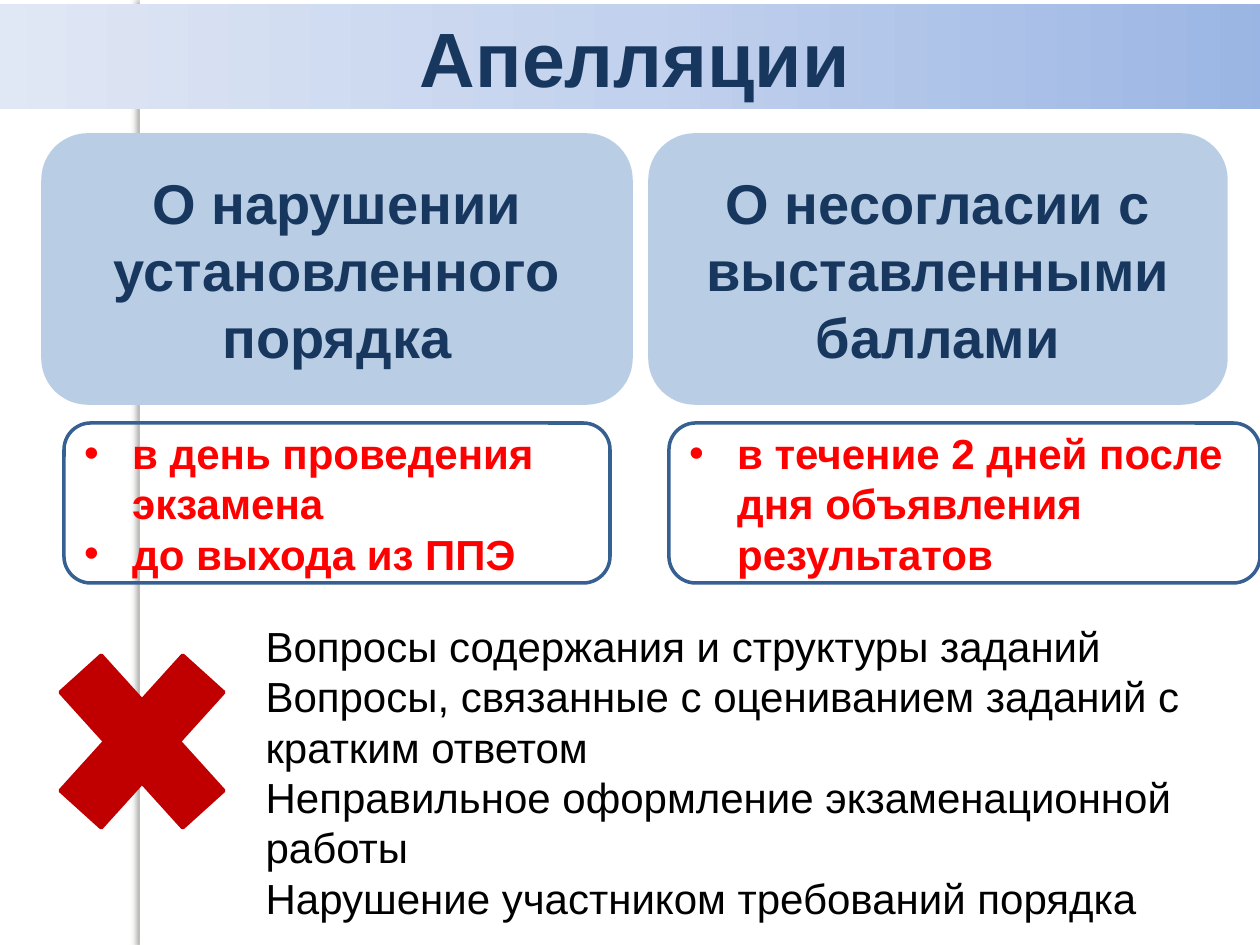
from copy import deepcopy
from lxml import etree
from pptx import Presentation
from pptx.dml.color import RGBColor
from pptx.enum.shapes import MSO_SHAPE
from pptx.enum.text import MSO_ANCHOR, MSO_AUTO_SIZE, PP_ALIGN
from pptx.oxml.ns import qn
from pptx.util import Emu, Pt

RECT, ROUND = MSO_SHAPE.RECTANGLE, MSO_SHAPE.ROUNDED_RECTANGLE
CROSS = MSO_SHAPE.MATH_MULTIPLY
TOP, MIDDLE = MSO_ANCHOR.TOP, MSO_ANCHOR.MIDDLE
LEFT, CENTER = PP_ALIGN.LEFT, PP_ALIGN.CENTER
FIXED = MSO_AUTO_SIZE.NONE
SCALE = 914400 / 126
COLORS = {
    "white": "FFFFFF", "black": "000000", "navy": "17375E", "pale": "B9CDE5",
    "edge": "376092", "red": "FF0000", "cross": "C00000", "shade": "77756F",
    "deep": "9AB5E4", "mid": "C2D1ED", "light": "E1E8F5",
}
HEAD = {"size": Pt(44), "bold": True}
CARD = {"size": Pt(32), "bold": True}
TERM = {"size": Pt(24), "bold": True}
LIST = {"size": Pt(24), "bold": False}
COLUMNS = [
    ((43, 135, 588, 268), "О нарушении установленного порядка",
     (64, 423, 546, 160), ["в день проведения экзамена", "до выхода из ППЭ"]),
    ((650, 135, 576, 268), "О несогласии с выставленными баллами",
     (669, 423, 591, 160), ["в течение 2 дней после дня объявления результатов"]),
]
LIMITS = [
    "Вопросы содержания и структуры заданий",
    "Вопросы, связанные с оцениванием заданий с кратким ответом",
    "Неправильное оформление экзаменационной работы",
    "Нарушение участником требований порядка",
]


def px(num):
    return Emu(round(num * SCALE))


def rgb(name):
    return RGBColor.from_string(COLORS[name])


def place(shape, box):
    for key, num in zip(("left", "top", "width", "height"), box):
        setattr(shape, key, px(num))


def draw(slide, kind, box, fill=None, line=None):
    shape = slide.shapes.add_shape(kind, *map(px, box))
    shape.shadow.inherit = False
    if fill:
        shape.fill.solid()
        shape.fill.fore_color.rgb = rgb(fill)
    else:
        shape.fill.background()
    if line:
        shape.line.color.rgb = rgb(line)
        shape.line.width = Pt(2)
    else:
        shape.line.fill.background()
    return shape


def write(shape, lines, style, color, align=LEFT, anchor=MIDDLE, mark=None):
    frame = shape.text_frame
    frame.word_wrap = True
    frame.auto_size = FIXED
    frame.vertical_anchor = anchor
    frame.text = "\n".join(lines)
    for para in frame.paragraphs:
        props = para._p.get_or_add_pPr()
        dent = px(48) if mark else 0
        props.set("marL", str(dent))
        props.set("indent", str(-dent))
        para.alignment = align
        para.space_before = Pt(0)
        if mark:
            etree.SubElement(props, qn("a:buFont"), typeface="Arial")
            etree.SubElement(props, qn("a:buChar"), char=mark)
        else:
            etree.SubElement(props, qn("a:buNone"))
        for run in para.runs:
            run.font.name = "Arial"
            run.font.color.rgb = rgb(color)
            for key, value in style.items():
                setattr(run.font, key, value)


def shade(shape, color, alpha, blur, dist, turn):
    effects = shape._element.spPr.find(qn("a:effectLst"))
    outer = etree.SubElement(
        effects, qn("a:outerShdw"), blurRad=str(Pt(blur)), dist=str(Pt(dist)),
        dir=str(turn * 60000), algn="tl", rotWithShape="0")
    tint = etree.SubElement(outer, qn("a:srgbClr"), val=COLORS[color])
    etree.SubElement(tint, qn("a:alpha"), val=str(alpha * 1000))


def page(slide, box):
    left, top, width, height = box
    sheet = draw(slide, RECT, box, "white")
    shade(sheet, "black", 38, 3.1, 1.6, 90)
    strip = draw(slide, RECT, (left, top, 10, height), "white")
    shade(strip, "shade", 25, 3, 3, 180)


def banner(slide, box):
    title = slide.shapes.title
    slide.shapes._spTree.append(title._element)
    place(title, box)
    title.fill.gradient()
    title.fill.gradient_angle = 180
    first = next(title._element.iter(qn("a:gs")))
    first.addnext(deepcopy(first))
    stops = title.fill.gradient_stops
    for stop, spot, name in zip(stops, (0, 0.5, 1), ("deep", "mid", "light")):
        stop.position = spot
        stop.color.rgb = rgb(name)
    write(title, ["Апелляции"], HEAD, "navy", CENTER)


def column(slide, top, name, base, terms):
    card = draw(slide, ROUND, top, "pale", "pale")
    write(card, [name], CARD, "navy", CENTER)
    frame = draw(slide, ROUND, base, line="edge")
    write(frame, terms, TERM, "red", mark="•")


def limits(slide, box):
    left, top, width, height = box
    body = slide.placeholders[1]
    slide.shapes._spTree.append(body._element)
    place(body, (left + 229, top + 3, width - 229, height))
    write(body, LIMITS, LIST, "black", anchor=TOP)
    draw(slide, CROSS, (left, top, 236, 261), "cross", "cross")


def main():
    deck = Presentation()
    deck.slide_width, deck.slide_height = px(1260), px(945)
    slide = deck.slides.add_slide(deck.slide_layouts[1])
    page(slide, (140, 0, 1120, 945))
    banner(slide, (-15, 4, 1300, 105))
    for item in COLUMNS:
        column(slide, *item)
    limits(slide, (24, 611, 1236, 267))
    deck.save("out.pptx")


if __name__ == "__main__":
    main()
